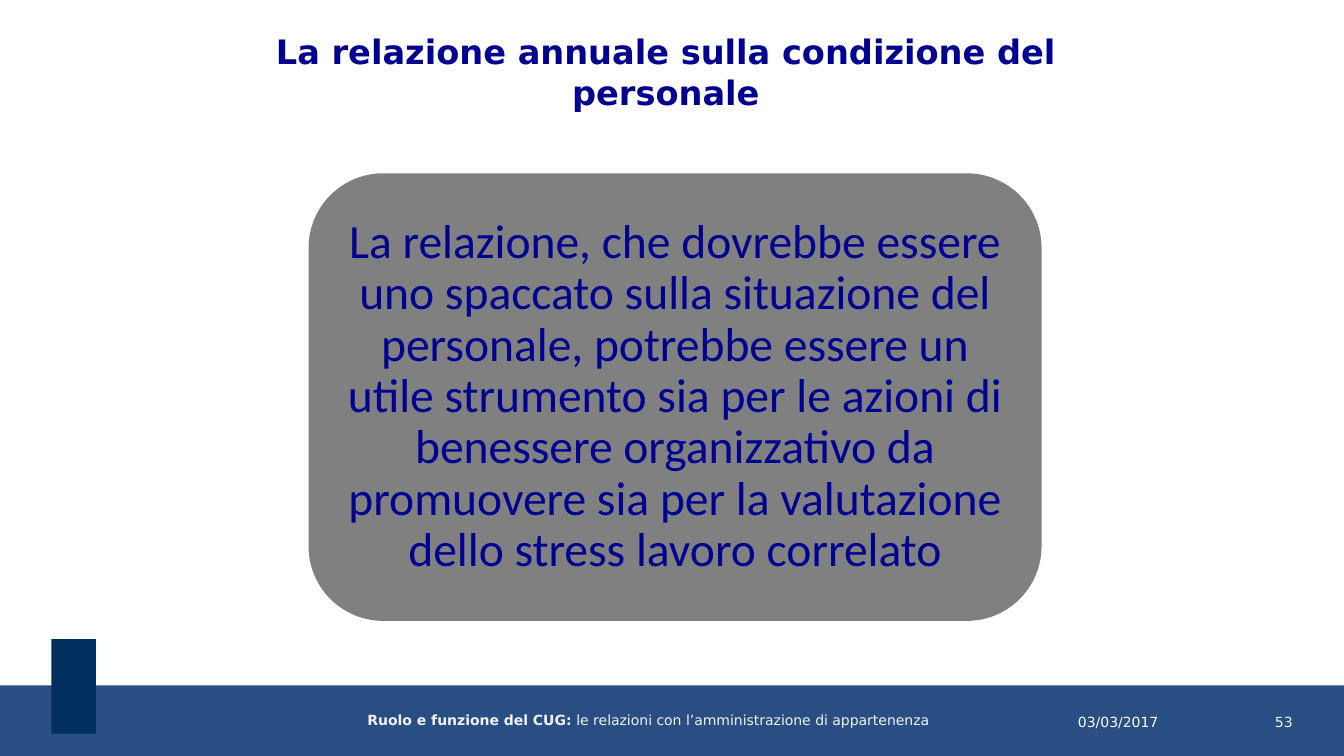
from dataclasses import dataclass

from pptx import Presentation
from pptx.dml.color import RGBColor
from pptx.enum.shapes import MSO_SHAPE as SHAPE
from pptx.enum.text import MSO_ANCHOR as ANCHOR, PP_ALIGN as ALIGN
from pptx.util import Inches, Pt

WIDTH, HEIGHT = Inches(13.33), Inches(7.5)


@dataclass(frozen=True)
class Theme:
    """Colours, fonts and type sizes of the slide."""
    bar: str = "284E83"
    tab: str = "002E5D"
    panel: str = "808080"
    ink: str = "000090"
    white: str = "FFFFFF"
    pale: str = "F2F2F2"
    sans: str = "DejaVu Sans"
    body: str = "Calibri"
    title_size: int = 24
    body_size: int = 34
    footer_size: int = 10


THEME = Theme()


def place(left, top, width, height):
    """Turn percentages of the slide into a position and a size."""
    return (int(WIDTH * left / 100), int(HEIGHT * top / 100),
            int(WIDTH * width / 100), int(HEIGHT * height / 100))


def add_block(s, kind, area, colour):
    """Add a flat filled shape without outline."""
    sp = s.shapes.add_shape(kind, *place(*area))
    sp.shadow.inherit = False
    sp.fill.solid()
    sp.fill.fore_color.rgb = RGBColor.from_string(colour)
    sp.line.fill.background()
    return sp


def write(sp, parts, size, colour, font, align=ALIGN.CENTER, inset=0.0, anchor=ANCHOR.TOP):
    """Write one paragraph of (text, bold) parts into a shape."""
    tf = sp.text_frame
    tf.word_wrap = True
    tf.vertical_anchor = anchor
    tf.margin_left = tf.margin_right = Inches(inset)
    tf.margin_top = tf.margin_bottom = Inches(inset / 2 if anchor == ANCHOR.TOP else inset)
    p = tf.paragraphs[0]
    p.alignment = align
    for text, bold in parts:
        r = p.add_run()
        r.text = text
        r.font.name, r.font.size, r.font.bold = font, Pt(size), bold
        r.font.color.rgb = RGBColor.from_string(colour)
    return p


def add_title(s, text):
    """Add the bold centred title."""
    sp = s.shapes.add_textbox(*place(17.55, 3.47, 63.99, 12.13))
    write(sp, [(text, True)], THEME.title_size, THEME.ink, THEME.sans, inset=0.1)


def add_panel(s, text):
    """Add the rounded panel with the main statement."""
    sp = add_block(s, SHAPE.ROUNDED_RECTANGLE, (22.96, 22.93, 54.54, 59.2), THEME.panel)
    p = write(sp, [(text, False)], THEME.body_size, THEME.ink, THEME.body,
              inset=0.09, anchor=ANCHOR.MIDDLE)
    p.line_spacing = 0.9


def add_footer_text(s, left, width, parts, colour, align=ALIGN.CENTER):
    """Add a small text on the footer line."""
    sp = s.shapes.add_textbox(*place(left, 94.4, width, 5.33))
    return write(sp, parts, THEME.footer_size, colour, THEME.sans, align)


def add_footer(s):
    """Add the footer bar with its tab, date, number and topic."""
    add_block(s, SHAPE.RECTANGLE, (0, 90.67, 100, 9.33), THEME.bar)
    add_block(s, SHAPE.RECTANGLE, (3.83, 84.53, 3.3, 12.53), THEME.tab)
    add_footer_text(s, 77.27, 11.85, [("03/03/2017", False)], THEME.white)
    add_footer_text(s, 84.25, 11.93, [("53", False)], THEME.pale, ALIGN.RIGHT)
    topic = [("Ruolo e funzione del CUG: ", True),
             ("le relazioni con l’amministrazione di appartenenza", False)]
    add_footer_text(s, 22.13, 52.21, topic, THEME.pale).line_spacing = 0.9


def main():
    """Build the slide and save it."""
    prs = Presentation()
    prs.slide_width, prs.slide_height = WIDTH, HEIGHT
    s = prs.slides.add_slide(prs.slide_layouts[6])
    add_footer(s)
    add_panel(s, "La relazione, che dovrebbe essere uno spaccato sulla situazione del "
                 "personale, potrebbe essere un utile strumento sia per le azioni di "
                 "benessere organizzativo da promuovere sia per la valutazione dello "
                 "stress lavoro correlato")
    add_title(s, "La relazione annuale sulla condizione del personale")
    prs.save("out.pptx")


if __name__ == "__main__":
    main()
